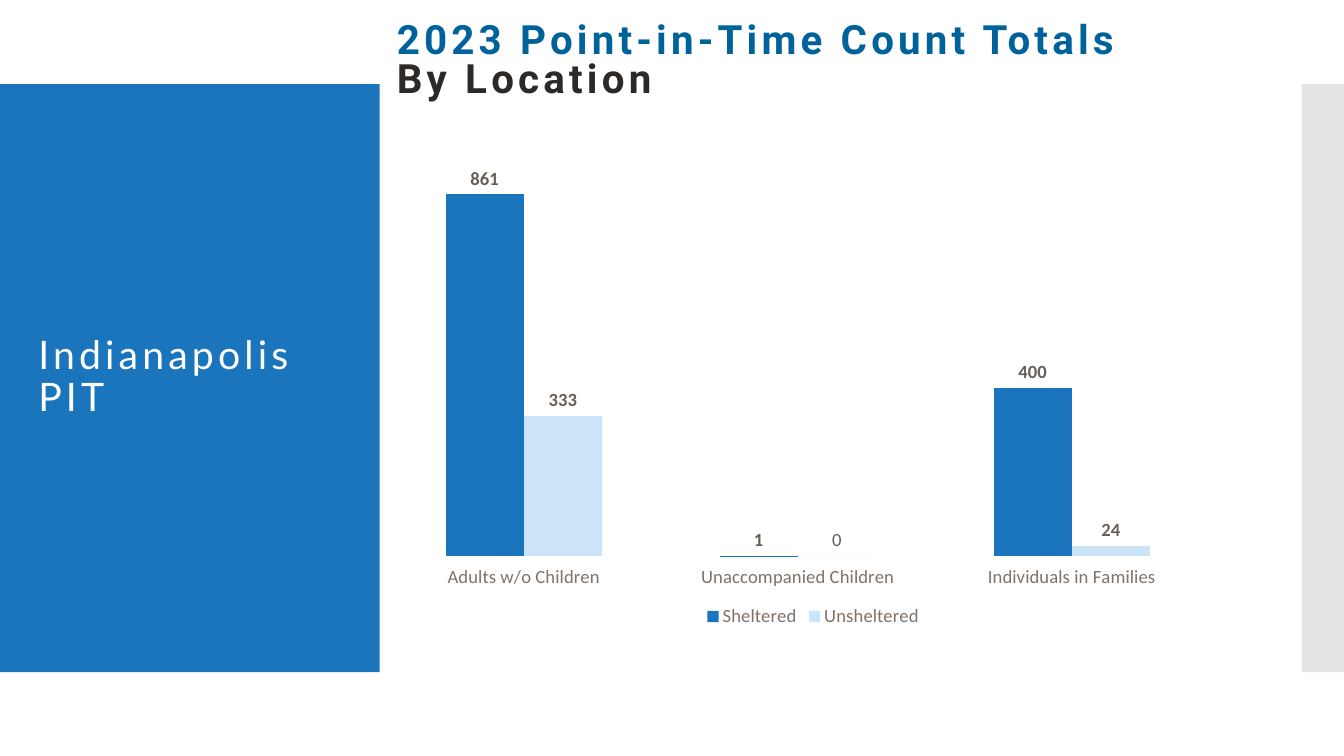
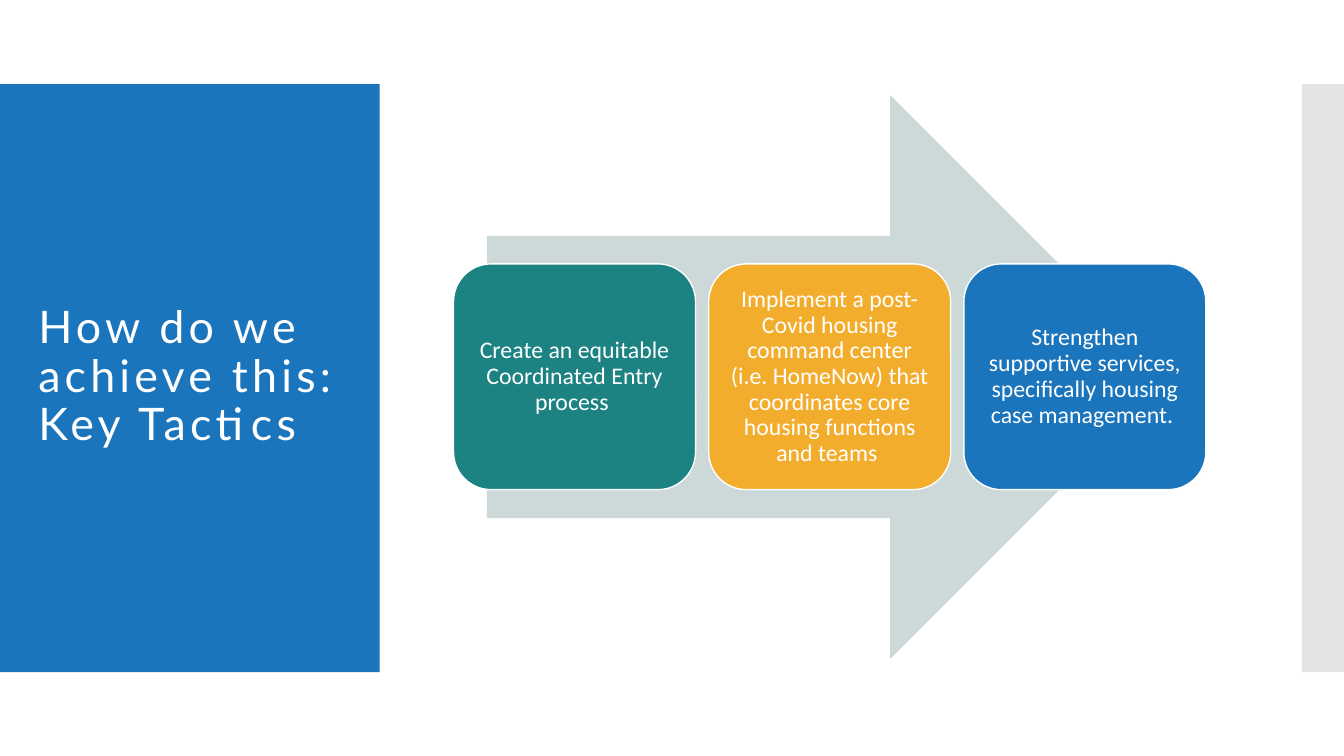
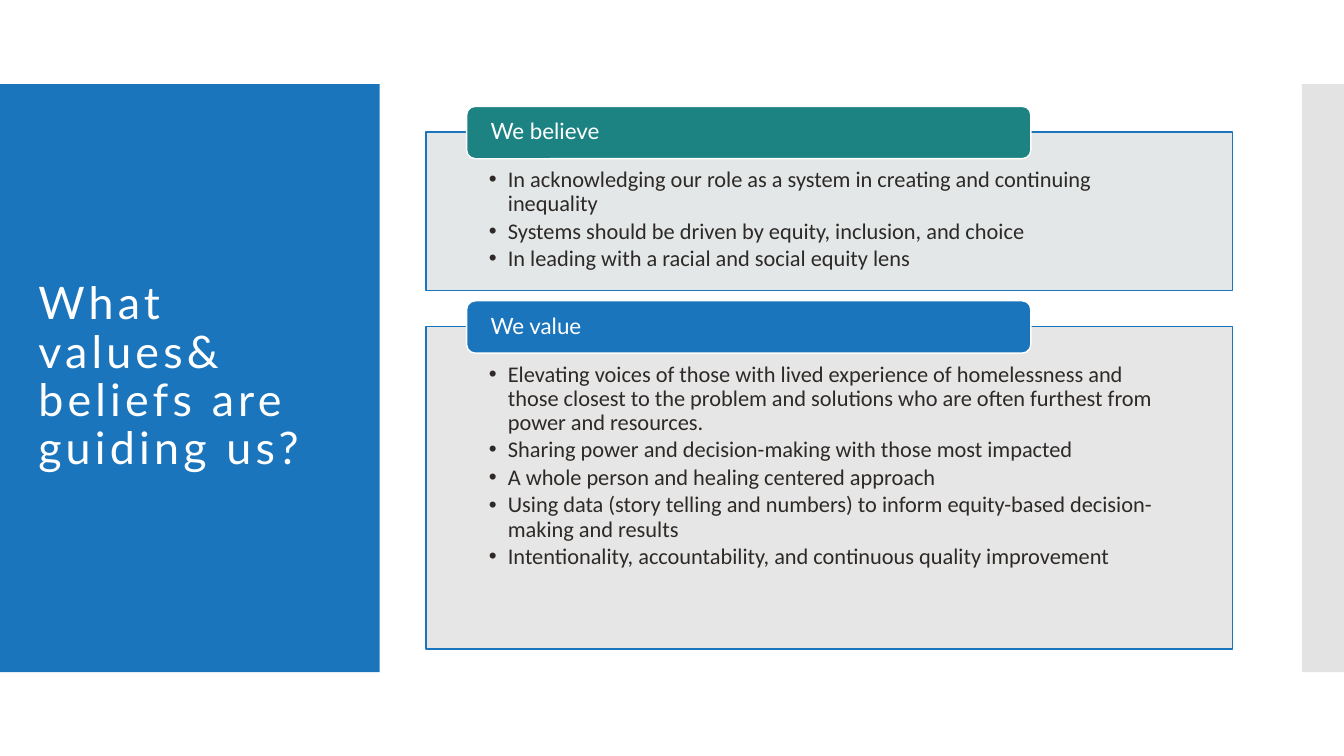
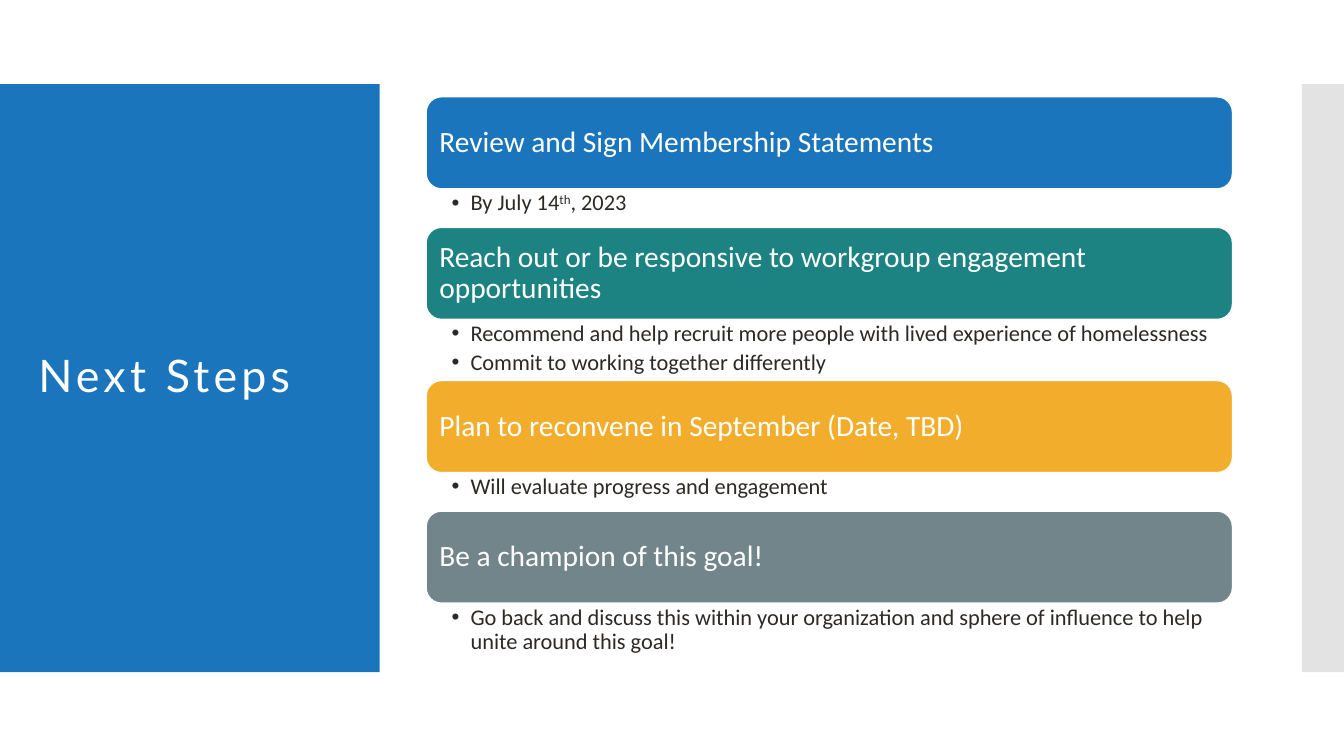
from lxml import etree
from pptx import Presentation
from pptx.chart import data as chart_data
from pptx.dml import color as dml
from pptx.enum import chart as charts, shapes, text
from pptx.oxml import ns
from pptx.util import Cm, Pt

COLORS = {
    "blue": "1B75BC", "light_blue": "CBE4F8", "deep_blue": "00629B",
    "teal": "1C8282", "amber": "F3AD2C", "slate": "71858B",
    "arrow": "CDD8D8", "pale_slate": "E3E7E8", "pale_gray": "E7E6E6",
    "band": "C8C8C8", "white": "FFFFFF", "ink": "2D2926",
    "axis": "7E736A", "label": "675E57",
}
RECTANGLE = shapes.MSO_SHAPE.RECTANGLE
ROUNDED = shapes.MSO_SHAPE.ROUNDED_RECTANGLE
LEFT, CENTER = text.PP_ALIGN.LEFT, text.PP_ALIGN.CENTER
TOP, MIDDLE = text.MSO_ANCHOR.TOP, text.MSO_ANCHOR.MIDDLE
CONTENT_LEFT, CONTENT_WIDTH = 10.74, 20.32
BAND_TOP, BAND_HEIGHT = 2.12, 14.82


def rgb(name):
    return dml.RGBColor.from_string(COLORS[name])


def apply(target, values):
    for name, value in values.items():
        setattr(target, name, value)


def set_font(font, color, size, name="Calibri", bold=False):
    apply(font, {"size": Pt(size), "name": name, "bold": bold})
    font.color.rgb = rgb(color)


def add_run(paragraph, content, font, spacing=0, baseline=0):
    run = paragraph.add_run()
    run.text = content
    set_font(run.font, **font)
    properties = run._r.get_or_add_rPr()
    for name, value in {"spc": spacing, "baseline": baseline}.items():
        if value:
            properties.set(name, str(value))


def add_bullet(paragraph):
    properties = paragraph._p.get_or_add_pPr()
    indent = Cm(0.48)
    properties.set("marL", str(indent))
    properties.set("indent", str(-indent))
    etree.SubElement(properties, ns.qn("a:buFont")).set("typeface", "Arial")
    etree.SubElement(properties, ns.qn("a:buChar")).set("char", "•")


def write_paragraphs(shape, items, font, align=LEFT, anchor=MIDDLE,
                     margins=(0.25, 0.13, 0.25, 0.13), gap=None):
    frame = shape.text_frame
    apply(frame, {"word_wrap": True, "vertical_anchor": anchor,
                  "auto_size": text.MSO_AUTO_SIZE.NONE})
    sides = ("margin_left", "margin_top", "margin_right", "margin_bottom")
    apply(frame, {side: Cm(margin) for side, margin in zip(sides, margins)})
    for index, item in enumerate(items):
        paragraph = frame.paragraphs[0] if index == 0 else frame.add_paragraph()
        if gap is not None:
            add_bullet(paragraph)
            paragraph.space_after = Pt(gap)
        apply(paragraph, {"alignment": align, "line_spacing": 0.9})
        parts = [(item, 0)] if isinstance(item, str) else item
        for content, baseline in parts:
            add_run(paragraph, content, font, baseline=baseline)


def add_block(slide, kind, place, fill, line=None):
    shape = slide.shapes.add_shape(kind, *map(Cm, place))
    shape.shadow.inherit = False
    shape.fill.solid()
    shape.fill.fore_color.rgb = rgb(fill)
    if line:
        shape.line.color.rgb = rgb(line)
        shape.line.width = Pt(1)
    else:
        shape.line.fill.background()
    return shape


def prepare_layout(presentation, slide):
    layout = slide.slide_layout
    places = [("blue", 0, 9.57), ("band", 32.81, 1.06)]
    for position, (fill, left, width) in enumerate(places, start=2):
        band = add_block(slide, RECTANGLE, (left, BAND_TOP, width, BAND_HEIGHT), fill)
        if fill == "band":
            fill_color = band.element.find(".//" + ns.qn("a:srgbClr"))
            etree.SubElement(fill_color, ns.qn("a:alpha")).set("val", "50000")
        layout.shapes.element.insert(position, band.element)
    apply(layout.placeholders[0], {"left": Cm(0.71), "top": Cm(3.13),
                                   "width": Cm(8.18), "height": Cm(12.78)})


def add_slide(presentation, lines, size=32):
    slide = presentation.slides.add_slide(presentation.slide_layouts[5])
    if len(presentation.slides) == 1:
        prepare_layout(presentation, slide)
    frame = slide.shapes.title.text_frame
    apply(frame, {"word_wrap": True, "vertical_anchor": MIDDLE,
                  "auto_size": text.MSO_AUTO_SIZE.NONE})
    font = {"color": "white", "size": size, "name": "Lato"}
    write_lines(frame.paragraphs[0], [(line, font) for line in lines], 0.9)
    return slide


def write_lines(paragraph, lines, line_spacing):
    apply(paragraph, {"alignment": LEFT, "line_spacing": line_spacing})
    for index, (content, font) in enumerate(lines):
        if index:
            paragraph.add_line_break()
        add_run(paragraph, content, font, spacing=300)


def add_heading(slide):
    box = slide.shapes.add_textbox(Cm(9.75), Cm(0.46), Cm(21.21), Cm(2.24))
    apply(box.text_frame, {"word_wrap": True, "vertical_anchor": MIDDLE})
    base = {"size": 28.8, "name": "Roboto", "bold": True}
    write_lines(box.text_frame.paragraphs[0], [
        ("2023 Point-in-Time Count Totals", {**base, "color": "deep_blue"}),
        ("By Location", {**base, "color": "ink"}),
    ], 0.8)


def set_plot_layout(chart, x, y, w, h):
    plot_area = chart._chartSpace.find(".//" + ns.qn("c:plotArea"))
    layout = plot_area.find(ns.qn("c:layout"))
    if layout is None:
        layout = etree.Element(ns.qn("c:layout"))
        plot_area.insert(0, layout)
    manual = etree.SubElement(layout, ns.qn("c:manualLayout"))
    values = {"layoutTarget": "inner", "xMode": "edge", "yMode": "edge",
              "x": x, "y": y, "w": w, "h": h}
    for name, value in values.items():
        etree.SubElement(manual, ns.qn("c:" + name)).set("val", str(value))


def add_count_chart(slide):
    size = 13.3
    counts = chart_data.CategoryChartData()
    counts.categories = ["Adults w/o Children", "Unaccompanied Children",
                         "Individuals in Families"]
    counts.add_series("Sheltered", (861, 1, 400))
    counts.add_series("Unsheltered", (333, 0, 24))
    chart = slide.shapes.add_chart(
        charts.XL_CHART_TYPE.COLUMN_CLUSTERED, Cm(9.75), Cm(3.15),
        Cm(21.49), Cm(12.78), counts).chart
    set_font(chart.font, "ink", size)
    apply(chart, {"has_title": False, "has_legend": True})
    apply(chart.legend, {"position": charts.XL_LEGEND_POSITION.BOTTOM,
                         "include_in_layout": False})
    set_font(chart.legend.font, "axis", size)
    apply(chart.value_axis, {"visible": False, "has_major_gridlines": False,
                             "minimum_scale": 0, "maximum_scale": 1000})
    axis = chart.category_axis
    apply(axis, {"major_tick_mark": charts.XL_TICK_MARK.NONE,
                 "tick_label_position": charts.XL_TICK_LABEL_POSITION.LOW})
    axis.format.line.fill.background()
    set_font(axis.tick_labels.font, "axis", size)
    plot = chart.plots[0]
    apply(plot, {"gap_width": 150, "overlap": 0, "vary_by_categories": False})
    outside = charts.XL_LABEL_POSITION.OUTSIDE_END
    for series, fill in zip(plot.series, ("blue", "light_blue")):
        series.format.fill.solid()
        series.format.fill.fore_color.rgb = rgb(fill)
        apply(series.data_labels, {"show_value": True, "position": outside})
        set_font(series.data_labels.font, "label", size, bold=True)
    zero_label = plot.series[1].points[1].data_label
    add_run(zero_label.text_frame.paragraphs[0], "0",
            {"color": "label", "size": size})
    zero_label.position = outside
    set_plot_layout(chart, 0, 0.022, 0.964, 0.828)


def add_tactics(slide, tactics):
    add_block(slide, shapes.MSO_SHAPE.RIGHT_ARROW, (12.27, 2.39, 17.27, 14.22), "arrow")
    for index, (fill, content) in enumerate(tactics):
        card = add_block(slide, ROUNDED, (11.43 + index * 6.43, 6.65, 6.1, 5.69),
                         fill, "white")
        write_paragraphs(card, [content], {"color": "white", "size": 17},
                         align=CENTER, margins=(0.18,) * 4)


def add_principles(slide, sections):
    top = 3.33
    for heading, heading_fill, fill, height, items in sections:
        panel = add_block(slide, RECTANGLE, (CONTENT_LEFT, top, CONTENT_WIDTH, height),
                          fill, "blue")
        write_paragraphs(panel, items, {"color": "ink", "size": 16}, anchor=TOP,
                         margins=(1.58, 0.91, 1.58, 0.3), gap=2.4)
        tab = add_block(slide, ROUNDED, (CONTENT_LEFT + 1.02, top - 0.65, 14.22, 1.32),
                        heading_fill, "white")
        write_paragraphs(tab, [heading], {"color": "white", "size": 16, "name": "Lato"},
                         margins=(0.54, 0, 0.54, 0))
        top += height + 0.91


def add_steps(slide, steps):
    top, bar_height = 2.44, 2.32
    for fill, heading, list_height, items in steps:
        bar = add_block(slide, ROUNDED, (CONTENT_LEFT, top, CONTENT_WIDTH, bar_height),
                        fill, "white")
        write_paragraphs(bar, [heading], {"color": "white", "size": 21},
                         margins=(0.22,) * 4)
        top += bar_height
        details = slide.shapes.add_textbox(Cm(CONTENT_LEFT), Cm(top),
                                           Cm(CONTENT_WIDTH), Cm(list_height))
        write_paragraphs(details, items, {"color": "ink", "size": 16}, anchor=TOP,
                         margins=(0.64, 0.07, 0.4, 0.07), gap=3.2)
        top += list_height


def main():
    presentation = Presentation()
    apply(presentation, {"slide_width": Cm(33.87), "slide_height": Cm(19.05)})

    counts = add_slide(presentation, ["Indianapolis", "PIT"], size=28)
    add_heading(counts)
    add_count_chart(counts)

    tactics = add_slide(presentation, ["How do we achieve this: Key Tactics"])
    add_tactics(tactics, [
        ("teal", "Create an equitable Coordinated Entry process "),
        ("amber", "Implement a post-Covid housing command center (i.e. HomeNow) "
                  "that coordinates core housing functions and teams "),
        ("blue", "Strengthen supportive services, specifically housing "
                 "case management. "),
    ])

    principles = add_slide(presentation, ["What values& beliefs are guiding us?"])
    add_principles(principles, [
        ("We believe", "teal", "pale_slate", 3.99, [
            "In acknowledging our role as a system in creating and continuing inequality",
            "Systems should be driven by equity, inclusion, and choice",
            "In leading with a racial and social equity lens",
        ]),
        ("We value", "blue", "pale_gray", 8.13, [
            "Elevating voices of those with lived experience of homelessness and those "
            "closest to the problem and solutions who are often furthest from power "
            "and resources.",
            "Sharing power and decision-making with those most impacted",
            "A whole person and healing centered approach",
            "Using data (story telling and numbers) to inform equity-based "
            "decision-making and results",
            "Intentionality, accountability, and continuous quality improvement",
        ]),
    ])

    steps = add_slide(presentation, ["Next Steps"])
    add_steps(steps, [
        ("blue", "Review and Sign Membership Statements", 0.97,
         [[("By July 14", 0), ("th", 30000), (", 2023", 0)]]),
        ("teal", "Reach out or be responsive to workgroup engagement opportunities", 1.54,
         ["Recommend and help recruit more people with lived experience of homelessness",
          "Commit to working together differently"]),
        ("amber", "Plan to reconvene in September (Date, TBD)", 0.97,
         ["Will evaluate progress and engagement"]),
        ("slate", "Be a champion of this goal!", 1.4,
         ["Go back and discuss this within your organization and sphere of influence "
          "to help unite around this goal!"]),
    ])

    presentation.save("out.pptx")


if __name__ == "__main__":
    main()
